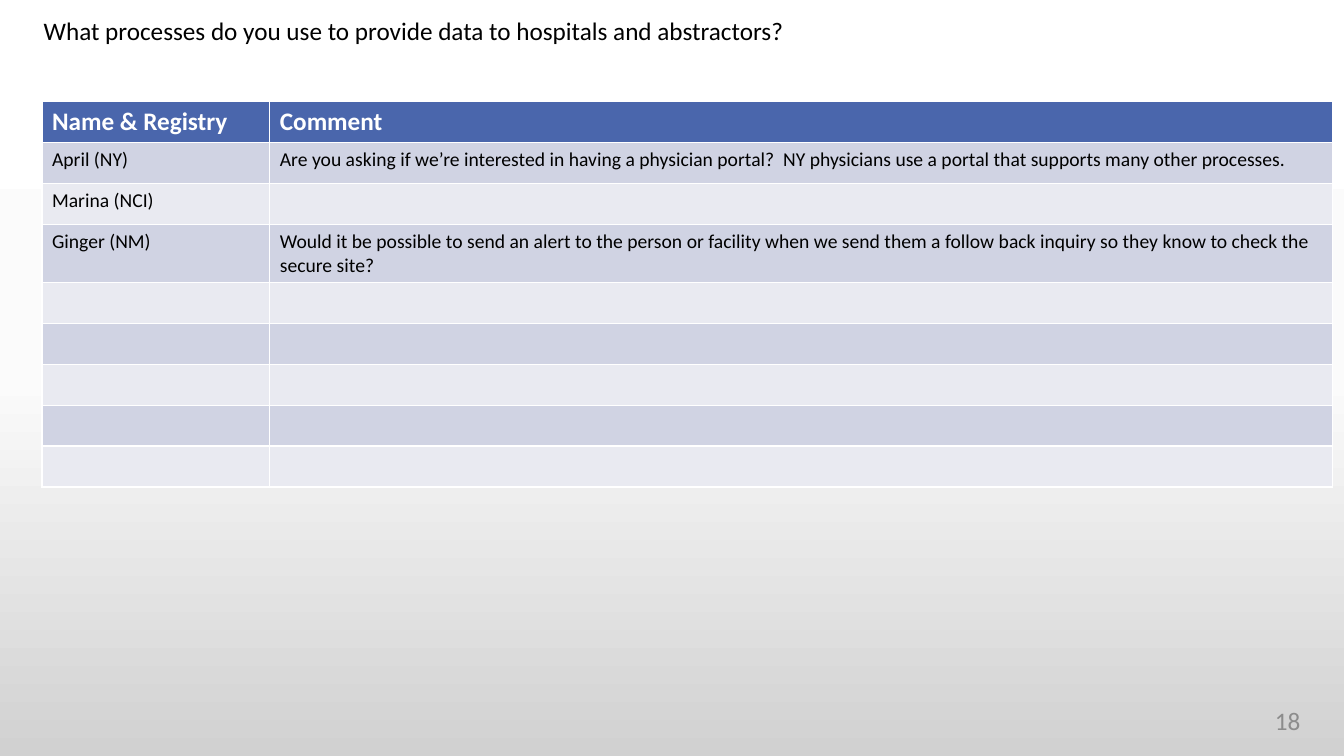
import copy
import dataclasses

import pptx
import pptx.dml.color
import pptx.enum.text
import pptx.oxml.ns
import pptx.util

PX = 9525


@dataclasses.dataclass(frozen=True)
class Theme:
    font: str = "Calibri"
    large: int = 18
    small: int = 14
    ink: str = "000000"
    header_ink: str = "FFFFFF"
    number_ink: str = "8C8C8C"
    header_fill: str = "4A66AC"
    bands: tuple = ("D0D3E3", "E9EAF1")
    backdrop: tuple = ((0, "FFFFFF"), (0.5, "FBFBFB"), (1, "D1D1D1"))


THEME = Theme()
QUESTION = "What processes do you use to provide data to hospitals and abstractors?"
HEADINGS = ("Name & Registry", "Comment")
COMMENTS = (
    ("April (NY)", "Are you asking if we’re interested in having a physician portal?  "
     "NY physicians use a portal that supports many other processes."),
    ("Marina (NCI)", ""),
    ("Ginger (NM)", "Would it be possible to send an alert to the person or facility when we "
     "send them a follow back inquiry so they know to check the secure site?"),
)
BLANK_ROWS = 5


def rgb(value):
    return pptx.dml.color.RGBColor.from_string(value)


def emu(box):
    return [length * PX for length in box]


def write(frame, text, size, color, bold=False, align=pptx.enum.text.PP_ALIGN.LEFT):
    paragraph = frame.paragraphs[0]
    if text:
        paragraph.text = text
    paragraph.alignment = align
    paragraph.font.name = THEME.font
    paragraph.font.size = pptx.util.Pt(size)
    paragraph.font.bold = bold
    paragraph.font.color.rgb = rgb(color)
    return paragraph


def paint_backdrop(slide):
    fill = slide.background.fill
    fill.gradient()
    fill.gradient_angle = 270
    stop_list = slide.element.find(".//" + pptx.oxml.ns.qn("a:gsLst"))
    stop_list.insert(1, copy.deepcopy(stop_list[0]))
    for stop, (position, color) in zip(fill.gradient_stops, THEME.backdrop):
        stop.position = position
        stop.color.rgb = rgb(color)


def add_question(slide, box):
    question = slide.shapes.title
    question.left, question.top, question.width, question.height = emu(box)
    frame = question.text_frame
    frame.word_wrap = True
    frame.auto_size = pptx.enum.text.MSO_AUTO_SIZE.NONE
    frame.vertical_anchor = pptx.enum.text.MSO_ANCHOR.TOP
    paragraph = write(frame, QUESTION, THEME.large, THEME.ink)
    paragraph.line_spacing = 0.9
    paragraph.space_before = pptx.util.Pt(10)


def add_comments(slide, box, name_width):
    rows = (HEADINGS, *COMMENTS, *[("", "")] * BLANK_ROWS)
    table = slide.shapes.add_table(len(rows), len(HEADINGS), *emu(box)).table
    table.columns[0].width = name_width * PX
    table.columns[1].width = (box[2] - name_width) * PX
    for row_index, row in enumerate(rows):
        header = row_index == 0
        fill = THEME.header_fill if header else THEME.bands[(row_index - 1) % 2]
        size = THEME.large if header else THEME.small
        ink = THEME.header_ink if header else THEME.ink
        for column_index, text in enumerate(row):
            cell = table.cell(row_index, column_index)
            cell.fill.solid()
            cell.fill.fore_color.rgb = rgb(fill)
            write(cell.text_frame, text, size, ink, bold=header)


def add_page_number(slide, box):
    frame = slide.shapes.add_textbox(*emu(box)).text_frame
    frame.word_wrap = True
    frame.vertical_anchor = pptx.enum.text.MSO_ANCHOR.MIDDLE
    write(frame, "18", THEME.large, THEME.number_ink, align=pptx.enum.text.PP_ALIGN.RIGHT)


def main():
    deck = pptx.Presentation()
    deck.slide_width, deck.slide_height = emu((1280, 720))
    slide = deck.slides.add_slide(deck.slide_layouts[5])
    paint_backdrop(slide)
    add_comments(slide, (40, 97, 1229, 351), 217)
    add_page_number(slide, (1192, 667, 56, 38))
    add_question(slide, (32, 13, 1199, 84))
    deck.save("out.pptx")


if __name__ == "__main__":
    main()
